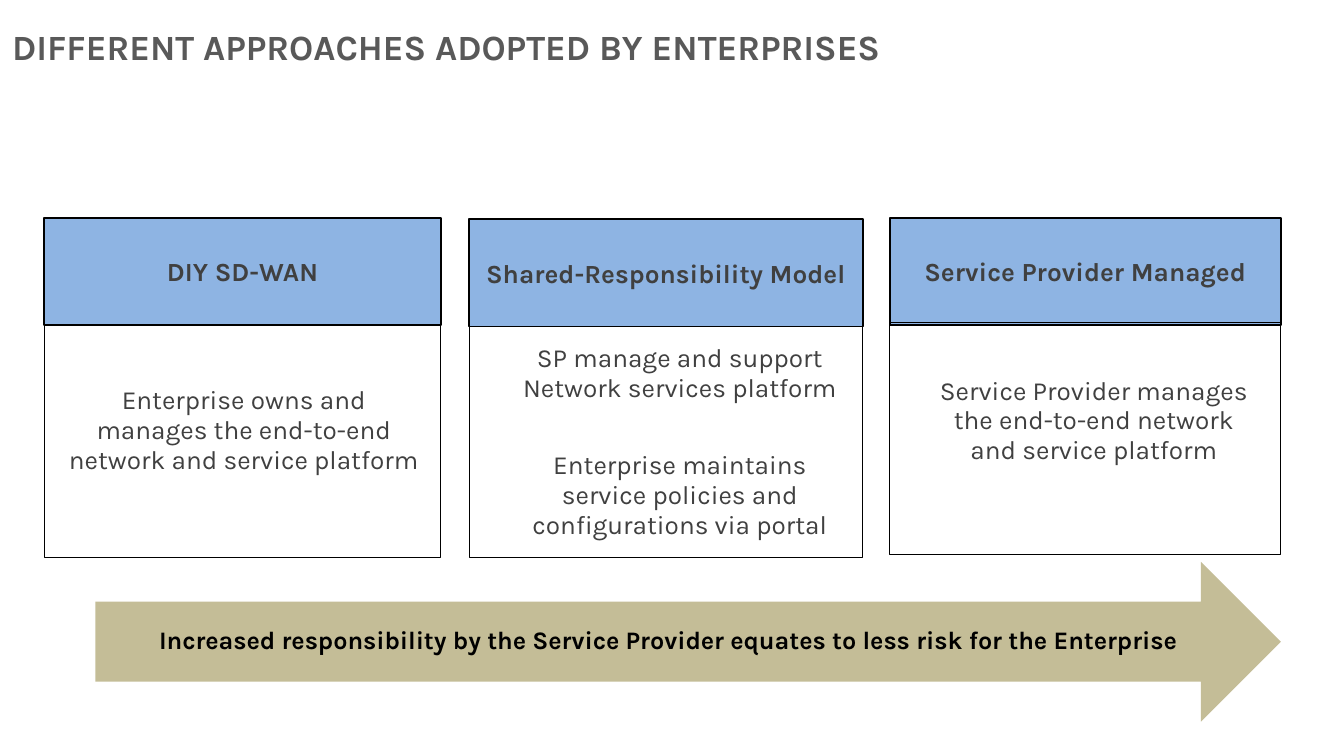
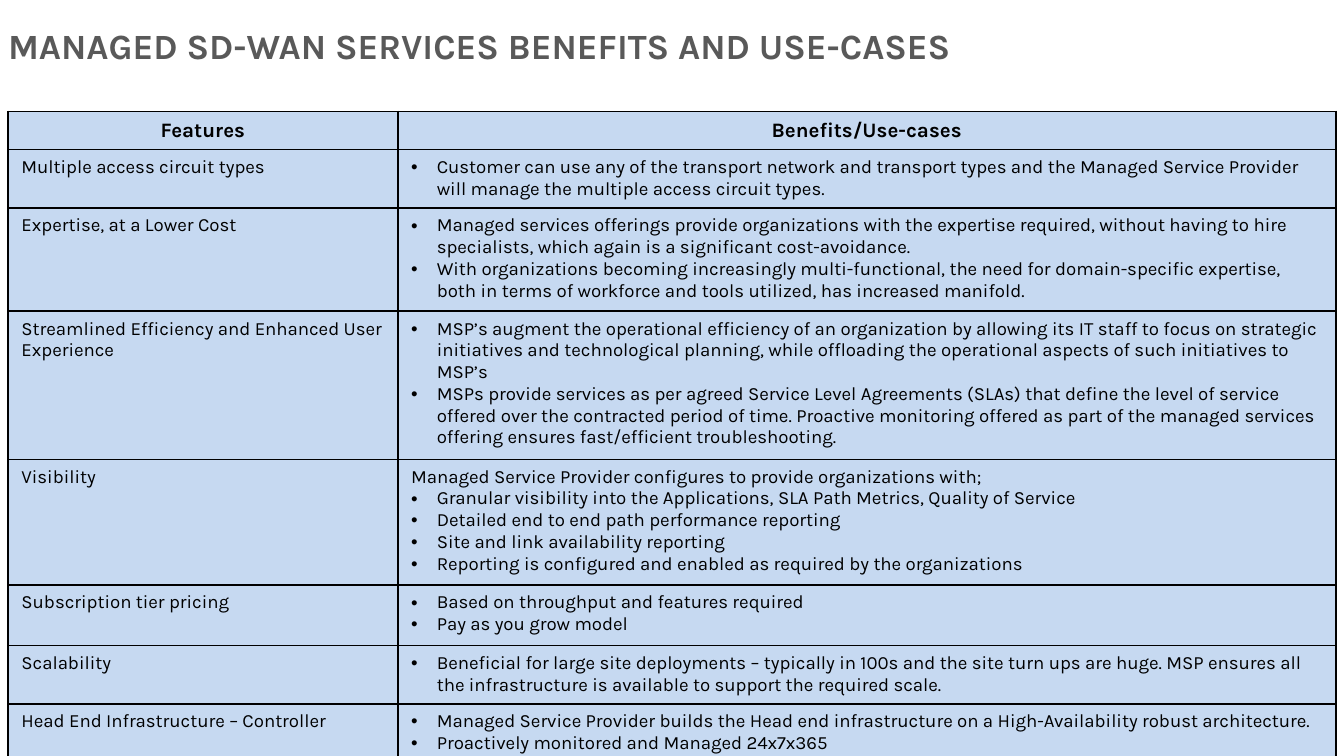
from dataclasses import dataclass

from lxml import etree
from pptx import Presentation
from pptx import util as u
from pptx.dml.color import RGBColor
from pptx.enum import shapes, text
from pptx.oxml.ns import qn

LEFT, CENTER = text.PP_ALIGN.LEFT, text.PP_ALIGN.CENTER
MIDDLE = text.MSO_ANCHOR.MIDDLE


@dataclass(frozen=True)
class Theme:
    font: str = "Karla"
    bullet_font: str = "Arial"
    title: str = "595959"
    body: str = "404040"
    black: str = "000000"
    head_fill: str = "8EB4E3"
    arrow_fill: str = "C4BD97"
    table_fill: str = "C6D9F1"
    title_size: float = 19
    box_size: float = 14
    arrow_size: float = 13.5
    table_head_size: float = 11
    table_size: float = 10


T = Theme()

# Column box (left, top, width, height), height of its header, text box, heading, paragraphs
APPROACHES = [
    ((0.33, 1.62, 2.95, 2.53), 0.8, (0.4, 2.82, 2.83, 0.77), "DIY SD-WAN",
     ["Enterprise owns and manages the end-to-end network and service platform"]),
    ((3.49, 1.63, 2.93, 2.52), 0.8, (3.71, 2.51, 2.7, 1.58), "Shared-Responsibility Model",
     ["SP manage and support Network services platform",
      "Enterprise maintains service policies and configurations via portal"]),
    ((6.62, 1.62, 2.91, 2.51), 0.78, (6.84, 2.75, 2.6, 0.77), "Service Provider Managed",
     ["Service Provider manages the end-to-end network and service platform"]),
]

# Row height, feature, lead-in line, bulleted benefits
BENEFITS = [
    (0.43, "Multiple access circuit types", None,
     ["Customer can use any of the transport network and transport types and the Managed "
      "Service Provider will manage the multiple access circuit types."]),
    (0.76, "Expertise, at a Lower Cost", None,
     ["Managed services offerings provide organizations with the expertise required, without "
      "having to hire specialists, which again is a significant cost-avoidance.",
      "With organizations becoming increasingly multi-functional, the need for domain-specific "
      "expertise, both in terms of workforce and tools utilized, has increased manifold."]),
    (0.92, "Streamlined Efficiency and Enhanced User Experience", None,
     ["MSP’s augment the operational efficiency of an organization by allowing its IT staff to "
      "focus on strategic initiatives and technological planning, while offloading the "
      "operational aspects of such initiatives to MSP’s",
      "MSPs provide services as per agreed Service Level Agreements (SLAs) that define the level "
      "of service offered over the contracted period of time. Proactive monitoring offered as "
      "part of the managed services offering ensures fast/efficient troubleshooting."]),
    (0.93, "Visibility", "Managed Service Provider configures to provide organizations with;",
     ["Granular visibility into the Applications, SLA Path Metrics, Quality of Service",
      "Detailed end to end path performance reporting",
      "Site and link availability reporting",
      "Reporting is configured and enabled as required by the organizations"]),
    (0.45, "Subscription tier pricing", None,
     ["Based on throughput and features required", "Pay as you grow model"]),
    (0.43, "Scalability", None,
     ["Beneficial for large site deployments – typically in 100s and the site turn ups are huge. "
      "MSP ensures all the infrastructure is available to support the required scale."]),
    (0.43, "Head End Infrastructure – Controller", None,
     ["Managed Service Provider builds the Head end infrastructure on a High-Availability robust "
      "architecture.",
      "Proactively monitored and Managed 24x7x365"]),
]


def rgb(value):
    return RGBColor.from_string(value)


def inches(box):
    return [u.Inches(v) for v in box]


def write(tf, content, *, size, color=T.black, bold=False, align=LEFT, spacing=None,
          before=None, after=None, bullet=False, first=True):
    """Write one formatted paragraph; first=False appends it."""
    p = tf.paragraphs[0] if first else tf.add_paragraph()
    p.alignment = align
    if spacing:
        p.line_spacing = spacing
    if before is not None:
        p.space_before = u.Pt(before)
    if after is not None:
        p.space_after = u.Pt(after)
    if bullet:
        pPr = p._p.get_or_add_pPr()
        pPr.set("marL", str(u.Inches(0.19)))
        pPr.set("indent", str(-u.Inches(0.19)))
        etree.SubElement(pPr, qn("a:buFont"), typeface=T.bullet_font)
        etree.SubElement(pPr, qn("a:buChar"), char="•")
    r = p.add_run()
    r.text = content
    r.font.name, r.font.size, r.font.bold = T.font, u.Pt(size), bold
    r.font.color.rgb = rgb(color)


def add_block(s, kind, box, fill=None, line=None):
    sp = s.shapes.add_shape(kind, *inches(box))
    sp.shadow.inherit = False
    if fill:
        sp.fill.solid()
        sp.fill.fore_color.rgb = rgb(fill)
    else:
        sp.fill.background()
    if line:
        sp.line.color.rgb = rgb(T.black)
        sp.line.width = u.Pt(line)
    else:
        sp.line.fill.background()
    tf = sp.text_frame
    tf.word_wrap, tf.vertical_anchor = True, MIDDLE
    return tf


def add_titled_slide(prs, title, box, spacing=None):
    s = prs.slides.add_slide(prs.slide_layouts[5])
    sp = s.shapes.title
    sp.left, sp.top, sp.width, sp.height = inches(box)
    tf = sp.text_frame
    tf.word_wrap, tf.vertical_anchor = True, MIDDLE
    tf.auto_size = text.MSO_AUTO_SIZE.SHAPE_TO_FIT_TEXT
    tf.margin_left, tf.margin_right = 0, u.Inches(0.1)
    tf.margin_top = tf.margin_bottom = u.Inches(0.05)
    write(tf, title, size=T.title_size, color=T.title, bold=True, spacing=spacing, before=0)
    return s


def add_approach(s, box, head_height, text_box, heading, paragraphs):
    left, top, width, height = box
    # Header band
    tf = add_block(s, shapes.MSO_SHAPE.RECTANGLE, (left, top, width, 0.8), T.head_fill, 1)
    write(tf, heading, size=T.box_size, color=T.body, bold=True, align=CENTER)
    # Outlined body
    add_block(s, shapes.MSO_SHAPE.RECTANGLE,
              (left, top + head_height, width, height - head_height), line=0.5)
    # Description
    tf = s.shapes.add_textbox(*inches(text_box)).text_frame
    tf.word_wrap = True
    for i, content in enumerate(paragraphs):
        write(tf, content, size=T.box_size, color=T.body, align=CENTER, spacing=0.95,
              before=21 if i else None, after=4.5, first=i == 0)


def add_risk_arrow(s, box):
    tf = add_block(s, shapes.MSO_SHAPE.RIGHT_ARROW, box, T.arrow_fill)
    write(tf, "Increased responsibility by the Service Provider equates to less risk for the "
          "Enterprise", size=T.arrow_size, bold=True, align=CENTER, spacing=0.9)


def style_cell(cell):
    # Borders precede the fill in the cell properties
    tcPr = cell._tc.get_or_add_tcPr()
    for side in ("lnL", "lnR", "lnT", "lnB"):
        ln = etree.SubElement(tcPr, qn(f"a:{side}"), w=str(u.Pt(1)))
        solid = etree.SubElement(ln, qn("a:solidFill"))
        etree.SubElement(solid, qn("a:srgbClr"), val=T.black)
    cell.fill.solid()
    cell.fill.fore_color.rgb = rgb(T.table_fill)


def add_benefits_table(s, left, top, col_widths, head_height):
    heights = [head_height] + [row[0] for row in BENEFITS]
    box = (left, top, sum(col_widths), sum(heights))
    table = s.shapes.add_table(len(heights), len(col_widths), *inches(box)).table
    table.first_row = table.horz_banding = False
    for col, width in zip(table.columns, col_widths):
        col.width = u.Inches(width)
    for row, height in zip(table.rows, heights):
        row.height = u.Inches(height)
    for cell in table.iter_cells():
        style_cell(cell)
    # Header row
    for c, heading in enumerate(("Features", "Benefits/Use-cases")):
        write(table.cell(0, c).text_frame, heading, size=T.table_head_size, bold=True,
              align=CENTER)
    # Feature rows
    for r, (_, feature, lead, bullets) in enumerate(BENEFITS, 1):
        write(table.cell(r, 0).text_frame, feature, size=T.table_size)
        tf = table.cell(r, 1).text_frame
        if lead:
            write(tf, lead, size=T.table_size)
        for i, content in enumerate(bullets):
            write(tf, content, size=T.table_size, bullet=True, first=i == 0 and not lead)


def approaches_slide(prs):
    s = add_titled_slide(prs, "DIFFERENT APPROACHES ADOPTED BY ENTERPRISES",
                         (0.09, 0.17, 7.98, 0.39), spacing=0.9)
    for approach in APPROACHES:
        add_approach(s, *approach)
    add_risk_arrow(s, (0.71, 4.18, 8.82, 1.19))


def benefits_slide(prs):
    s = add_titled_slide(prs, "MANAGED SD-WAN SERVICES BENEFITS AND USE-CASES",
                         (0.06, 0.13, 7.33, 0.42))
    add_benefits_table(s, 0.06, 0.83, (2.9, 6.98), 0.28)


def main():
    prs = Presentation()
    # Widescreen, 16:9
    prs.slide_width = u.Inches(10)
    prs.slide_height = prs.slide_width * 9 // 16
    approaches_slide(prs)
    benefits_slide(prs)
    prs.save("out.pptx")


if __name__ == "__main__":
    main()
